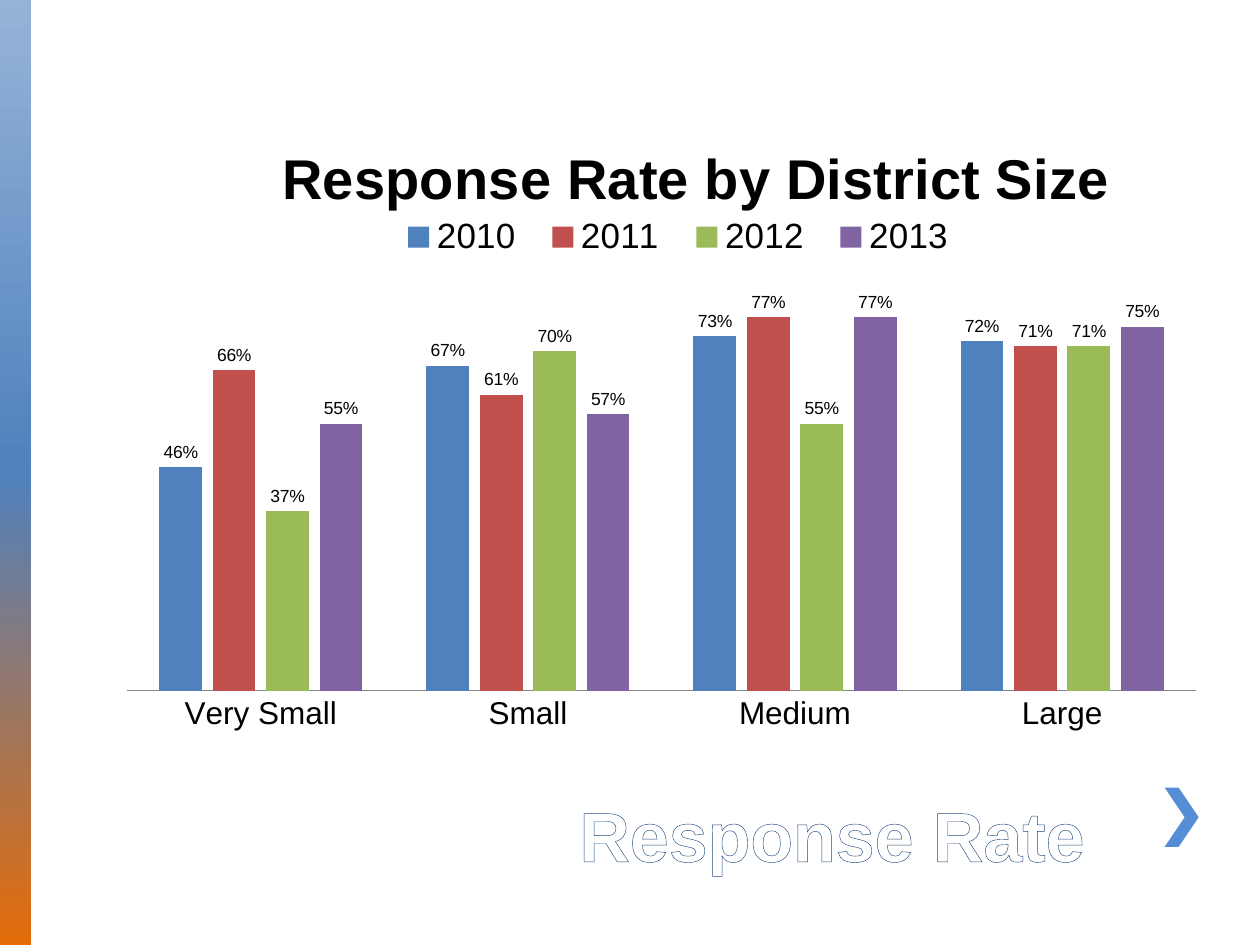
from dataclasses import dataclass

from lxml import etree
from pptx import Presentation
from pptx.chart.data import CategoryChartData
from pptx.dml.color import RGBColor
from pptx.enum import chart as ch, text as tx
from pptx.enum.shapes import MSO_SHAPE
from pptx.oxml.ns import qn
from pptx.util import Pt


@dataclass(frozen=True)
class Theme:
    """Colours and type sizes of the slide."""
    font: str = "Arial"
    ink: str = "000000"
    white: str = "FFFFFF"
    edge: str = "1F497D"
    mark: str = "558ED5"
    axis: str = "868686"
    band: tuple = ((0, "95B3D7"), (50, "4F81BD"), (100, "E46C0A"))
    bars: tuple = ("4F81BD", "C0504D", "9BBB59", "8064A2")
    head: int = 40
    title: int = 32
    key: int = 20
    cats: int = 18
    label: int = 10


T = Theme()
SIZES = ("Very Small", "Small", "Medium", "Large")
RATES = {
    "2010": (0.46, 0.67, 0.73, 0.72),
    "2011": (0.66, 0.61, 0.77, 0.71),
    "2012": (0.37, 0.70, 0.55, 0.71),
    "2013": (0.55, 0.57, 0.77, 0.75),
}


def add(node, tag, **attrs):
    """Append a child element and return it."""
    return etree.SubElement(node, qn(tag), {k: str(v) for k, v in attrs.items()})


def style(font, size, color=T.ink, bold=False):
    """Set face, size, colour and weight of a font."""
    font.name, font.size, font.bold = T.font, Pt(size), bold
    font.color.rgb = RGBColor.from_string(color)


def place(node, spot, inner=False):
    """Give a chart part a manual layout as fractions of the chart."""
    old = node.find(qn("c:layout"))
    if old is not None:
        node.remove(old)
    lay = add(node, "c:layout")
    man = add(lay, "c:manualLayout")
    if inner:
        add(man, "c:layoutTarget", val="inner")
        node.insert(0, lay)
    else:
        node.find(qn("c:overlay")).addprevious(lay)
    for key in "xy":
        add(man, f"c:{key}Mode", val="edge")
    for key, val in zip("xywh", spot):
        add(man, f"c:{key}", val=val)


def draw_band(slide, x, y, w, h):
    """Draw the vertical gradient band."""
    band = slide.shapes.add_shape(MSO_SHAPE.RECTANGLE, Pt(x), Pt(y), Pt(w), Pt(h))
    band.shadow.inherit = False
    band.line.fill.background()
    band.fill.gradient()
    grad = band.fill._xPr.find(qn("a:gradFill"))
    for kid in list(grad):
        grad.remove(kid)
    stops = add(grad, "a:gsLst")
    for pos, color in T.band:
        add(add(stops, "a:gs", pos=pos * 1000), "a:srgbClr", val=color)
    add(grad, "a:lin", ang=90 * 60000, scaled=0)


def draw_mark(slide, x, y, w, h):
    """Draw the chevron."""
    arm = 0.41 * w
    pts = [(arm, 0), (0, 0), (w - arm, h / 2), (0, h), (arm, h), (w, h / 2)]
    pts = [(Pt(x + a), Pt(y + b)) for a, b in pts]
    build = slide.shapes.build_freeform(*pts[0])
    build.add_line_segments(pts[1:], close=True)
    mark = build.convert_to_shape()
    mark.shadow.inherit = False
    mark.fill.solid()
    mark.fill.fore_color.rgb = RGBColor.from_string(T.mark)
    mark.line.fill.background()


def draw_head(slide, x, y, w, h):
    """Write the outlined heading, indented at the foot of its box."""
    frame = slide.shapes.add_textbox(Pt(x), Pt(y), Pt(w), Pt(h)).text_frame
    frame.word_wrap = True
    frame.vertical_anchor = tx.MSO_ANCHOR.BOTTOM
    frame.text = "Response Rate"
    para = frame.paragraphs[0]
    para._p.get_or_add_pPr().set("marL", str(Pt(288)))
    run = para.runs[0]
    style(run.font, T.head, T.white, True)
    props = run._r.get_or_add_rPr()
    line = add(props, "a:ln", w=Pt(1))
    add(add(line, "a:solidFill"), "a:srgbClr", val=T.edge)
    props.insert(0, line)


def draw_chart(slide, x, y, w, h):
    """Draw the clustered columns with title, legend and labels."""
    data = CategoryChartData(number_format="0%")
    data.categories = SIZES
    for name, vals in RATES.items():
        data.add_series(name, vals)
    chart = slide.shapes.add_chart(
        ch.XL_CHART_TYPE.COLUMN_CLUSTERED, Pt(x), Pt(y), Pt(w), Pt(h), data).chart
    style(chart.font, T.label)

    chart.has_title = True
    frame = chart.chart_title.text_frame
    frame.text = "Response Rate by District Size"
    style(frame.paragraphs[0].runs[0].font, T.title, bold=True)
    chart.chart_title.include_in_layout = False
    place(chart.chart_title._element, (0.15, 0.1))

    chart.has_legend = True
    key = chart.legend
    key.position = ch.XL_LEGEND_POSITION.TOP
    key.include_in_layout = False
    style(key.font, T.key)
    place(key._element, (0.25, 0.21, 0.53, 0.09))

    vals, cats = chart.value_axis, chart.category_axis
    vals.visible = vals.has_major_gridlines = False
    vals.minimum_scale, vals.maximum_scale = 0, 0.9
    cats.major_tick_mark = ch.XL_TICK_MARK.NONE
    cats.format.line.color.rgb = RGBColor.from_string(T.axis)
    style(cats.tick_labels.font, T.cats)

    plot = chart.plots[0]
    plot.vary_by_categories = False
    plot.gap_width, plot.overlap = 150, -25
    for row, color in zip(plot.series, T.bars):
        row.format.fill.solid()
        row.format.fill.fore_color.rgb = RGBColor.from_string(color)
        tags = row.data_labels
        tags.show_value = True
        tags.number_format, tags.number_format_is_linked = "0%", False
        tags.position = ch.XL_LABEL_POSITION.OUTSIDE_END
        style(tags.font, T.label)
    place(chart._chartSpace.chart.plotArea, (0.02, 0.28, 0.96, 0.64), True)


def main():
    """Build and save the slide."""
    deck = Presentation()
    deck.slide_width, deck.slide_height = Pt(720), Pt(540)
    slide = deck.slides.add_slide(deck.slide_layouts[6])
    draw_band(slide, 0, 0, 18, 540)
    draw_mark(slide, 665.5, 450, 19.5, 34)
    draw_head(slide, 36, 414, 654, 90)
    draw_chart(slide, 60, 36, 636, 390)
    deck.save("out.pptx")


if __name__ == "__main__":
    main()
